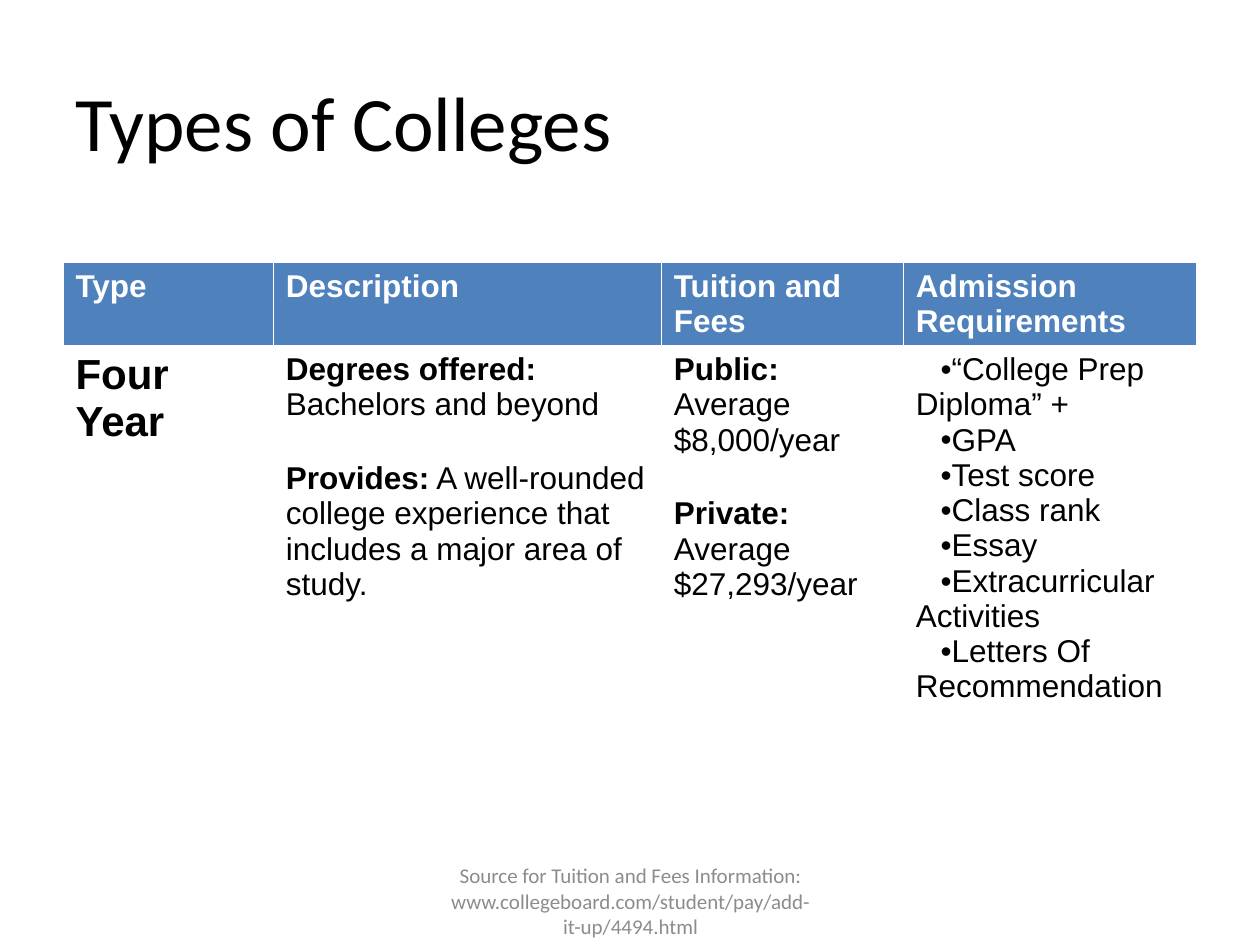
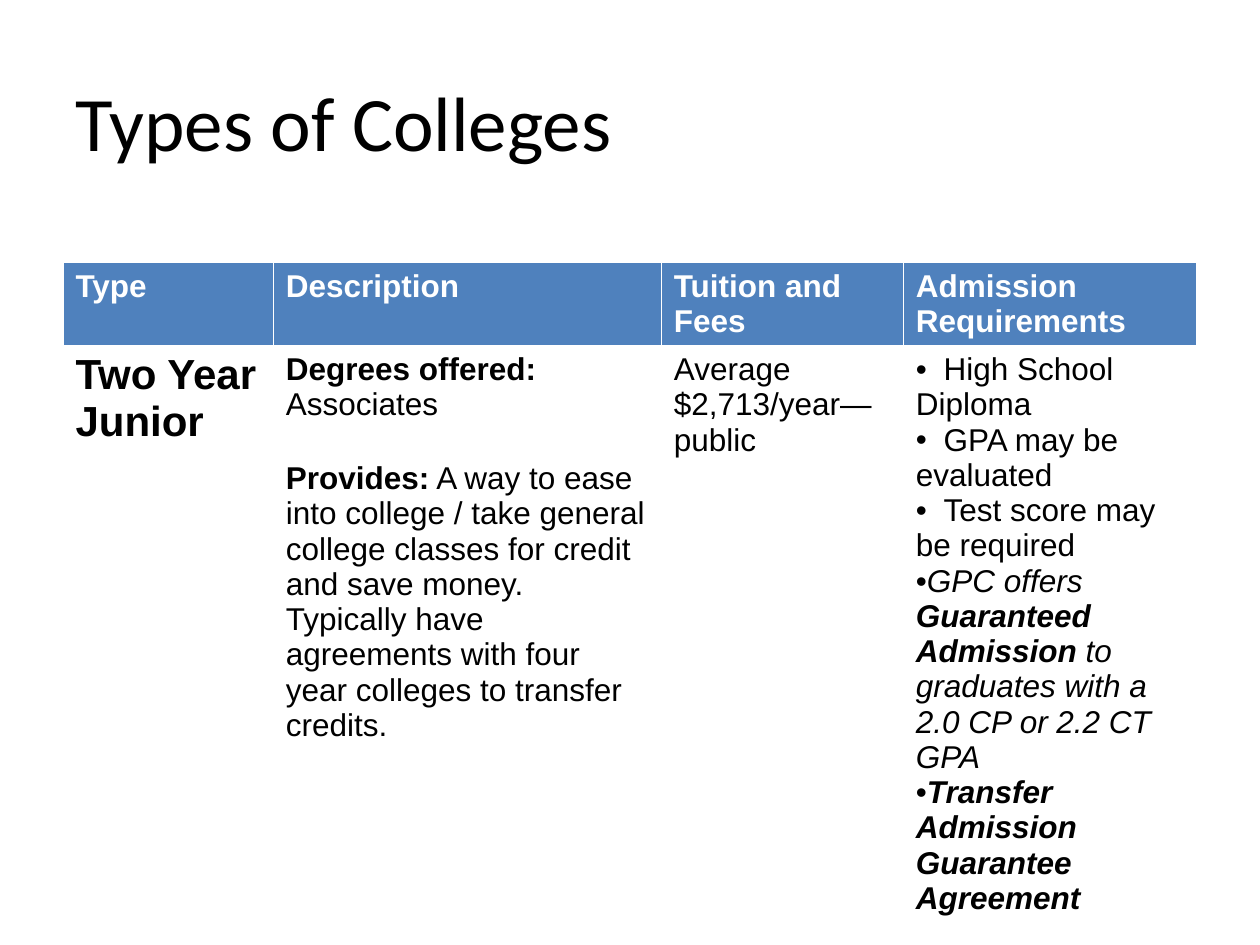
import pptx
import pptx.dml.color
import pptx.enum.text
import pptx.oxml.ns
import pptx.util
from lxml import etree
from pptx.util import Cm, Pt

BLACK, WHITE, GREY, BLUE = "000000", "FFFFFF", "8C8C8C", "4F81BD"
HEADINGS = ["Type", "Description", "Tuition and Fees", "Admission Requirements"]
COLUMN_WIDTHS = [4.24, 7.82, 4.88, 5.92]
SECTION_GAP = 22


def rgb(value):
    return pptx.dml.color.RGBColor.from_string(value)


def write(frame, paragraphs, font="Arial", size=18, color=BLACK, bold=False,
          align=pptx.enum.text.PP_ALIGN.LEFT, gaps=(), bullet_indent=None, tab=None):
    """Fill a frame with paragraphs: strings, or lists of (text, style) with style of "b" and "i".

    gaps holds the indexes of paragraphs that start a new section.
    """
    for index, runs in enumerate(paragraphs):
        paragraph = frame.paragraphs[0] if index == 0 else frame.add_paragraph()
        paragraph.alignment = align
        if index in gaps:
            paragraph.space_before = Pt(SECTION_GAP)
        if bullet_indent is not None:
            properties = paragraph._p.get_or_add_pPr()
            properties.set("marL", "0")
            properties.set("indent", str(Cm(bullet_indent)))
            qn = pptx.oxml.ns.qn
            etree.SubElement(properties, qn("a:buFont"), typeface="Arial")
            etree.SubElement(properties, qn("a:buChar"), char="•")
            if tab:
                stops = etree.SubElement(properties, qn("a:tabLst"))
                etree.SubElement(stops, qn("a:tab"), pos=str(Cm(tab)), algn="l")
        if isinstance(runs, str):
            runs = [(runs, "b" if bold else "")]
        for text, style in runs:
            run = paragraph.add_run()
            run.text = text
            run.font.name = font
            run.font.size = Pt(size)
            run.font.color.rgb = rgb(color)
            run.font.bold = "b" in style
            run.font.italic = "i" in style


colleges = [
    {
        "type": "Four Year",
        "row_height": 7.32,
        "description": [
            [("Degrees offered:", "b")],
            "Bachelors and beyond",
            [("Provides:", "b"),
             (" A well-rounded college experience that includes a major area of study.", "")],
        ],
        "description_gaps": [2],
        "tuition": [
            [("Public: ", "b"), ("Average $8,000/year", "")],
            [("Private: ", "b"), ("Average $27,293/year", "")],
        ],
        "admission": ["“College Prep Diploma” +", "GPA", "Test score", "Class rank", "Essay",
                      "Extracurricular Activities", "Letters Of Recommendation"],
        "bullets": {"bullet_indent": 0.5},
        "source": "Source for Tuition and Fees Information: "
                  "www.collegeboard.com/student/pay/add-it-up/4494.html",
    },
    {
        "type": "Two Year Junior",
        "row_height": 1.04,
        "description": [
            [("Degrees offered: ", "b"), ("Associates", "")],
            [("Provides:", "b"),
             (" A way to ease into college / take general college classes for credit"
              " and save money.", "")],
            "Typically have agreements with four year colleges to transfer credits.",
        ],
        "description_gaps": [1],
        "tuition": ["Average $2,713/year—public"],
        "admission": [
            "\tHigh School Diploma",
            "\tGPA may be evaluated",
            "\tTest score may be required",
            [("GPC offers ", "i"), ("Guaranteed Admission", "bi"),
             (" to graduates with a 2.0 CP or 2.2 CT GPA", "i")],
            [("Transfer Admission Guarantee Agreement", "bi")],
        ],
        "bullets": {"bullet_indent": 0, "tab": 0.56},
        "source": None,
    },
]

presentation = pptx.Presentation()
presentation.slide_width, presentation.slide_height = Cm(25.4), Cm(19.05)
title_only = presentation.slide_layouts[5]

for college in colleges:
    slide = presentation.slides.add_slide(title_only)
    title = slide.shapes.title
    title.left, title.top, title.width, title.height = Cm(1.27), Cm(0.84), Cm(22.86), Cm(3.18)
    title.text_frame.vertical_anchor = pptx.enum.text.MSO_ANCHOR.MIDDLE
    write(title.text_frame, ["Types of Colleges"], font="Calibri", size=44)

    header_height = 1.58
    comparison = slide.shapes.add_table(
        2, len(HEADINGS), Cm(1.27), Cm(5.29), Cm(22.86),
        Cm(header_height + college["row_height"])).table
    comparison.rows[0].height = Cm(header_height)
    comparison.rows[1].height = Cm(college["row_height"])
    for index, (heading, width) in enumerate(zip(HEADINGS, COLUMN_WIDTHS)):
        comparison.columns[index].width = Cm(width)
        heading_cell = comparison.cell(0, index)
        heading_cell.fill.solid()
        heading_cell.fill.fore_color.rgb = rgb(BLUE)
        write(heading_cell.text_frame, [heading], color=WHITE, bold=True)
        comparison.cell(1, index).fill.background()

    kind, description, tuition, admission = [cell.text_frame for cell in comparison.rows[1].cells]
    write(kind, [college["type"]], size=24, bold=True)
    write(description, college["description"], gaps=college["description_gaps"])
    write(tuition, college["tuition"], gaps=[1])
    write(admission, college["admission"], **college["bullets"])

    if college["source"]:
        source = slide.shapes.add_textbox(Cm(8.69), Cm(17.65), Cm(8.05), Cm(1.02)).text_frame
        source.word_wrap = True
        source.vertical_anchor = pptx.enum.text.MSO_ANCHOR.MIDDLE
        write(source, [college["source"]], font="Calibri", size=12, color=GREY,
              align=pptx.enum.text.PP_ALIGN.CENTER)

presentation.save("out.pptx")
